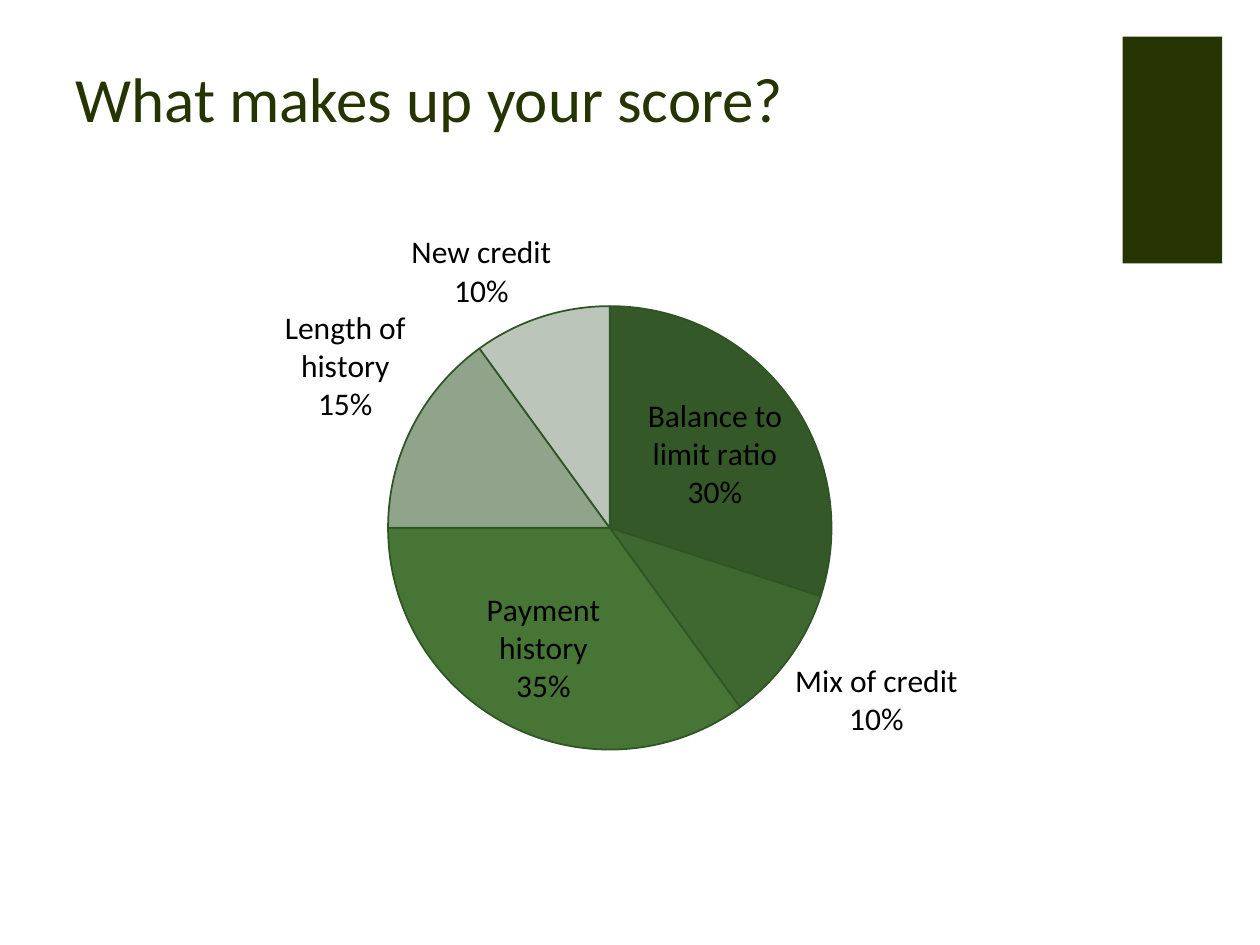
from dataclasses import dataclass

from lxml.etree import SubElement
from pptx import Presentation
from pptx.chart.data import CategoryChartData as ChartData
from pptx.dml.color import RGBColor as Color
from pptx.enum.chart import XL_CHART_TYPE as ChartType, XL_LABEL_POSITION as LabelPosition
from pptx.enum.shapes import MSO_SHAPE as Shape
from pptx.enum.text import MSO_ANCHOR as Anchor, PP_ALIGN as Align
from pptx.oxml.ns import qn
from pptx.util import Inches, Pt


@dataclass(frozen=True)
class Theme:
    font: str = "Calibri"
    dark: str = "263401"
    outline: str = "2F5524"
    label: str = "000000"
    title_size: int = 36
    label_size: int = 18


@dataclass(frozen=True)
class Box:
    left: float
    top: float
    width: float
    height: float

    def lengths(self) -> list:
        return [Inches(v) for v in (self.left, self.top, self.width, self.height)]


@dataclass(frozen=True)
class Factor:
    name: str
    percent: int
    color: str


THEME = Theme()
FACTORS = [
    Factor("Balance to limit ratio", 30, "355828"),
    Factor("Mix of credit", 10, "3F6830"),
    Factor("Payment history", 35, "477536"),
    Factor("Length of history", 15, "90A48C"),
    Factor("New credit", 10, "BBC5B9"),
]
CHART_BOX = Box(1.08, 1.53, 7.25, 5.39)
PIE_BOX = Box(3.08, 2.43, 3.52, 3.52)


def apply_format(target, values: dict) -> None:
    for name, value in values.items():
        setattr(target, name, value)


def format_font(font, size: int, color: str) -> None:
    apply_format(font, {"name": THEME.font, "size": Pt(size), "bold": False})
    font.color.rgb = Color.from_string(color)


def add_accent(slide, box: Box) -> None:
    accent = slide.shapes.add_shape(Shape.RECTANGLE, *box.lengths())
    accent.shadow.inherit = False
    accent.fill.solid()
    accent.fill.fore_color.rgb = Color.from_string(THEME.dark)
    accent.line.fill.background()


def set_title(slide, text: str, box: Box) -> None:
    title = slide.shapes.title
    apply_format(title, dict(zip(("left", "top", "width", "height"), box.lengths())))
    frame = title.text_frame
    apply_format(frame, {"text": text, "word_wrap": True, "vertical_anchor": Anchor.BOTTOM})
    para = frame.paragraphs[0]
    para.alignment = Align.LEFT
    format_font(para.runs[0].font, THEME.title_size, THEME.dark)


def place_plot(chart, outer: Box, inner: Box) -> None:
    """Fix the pie inside its chart, as fractions of the chart's size."""
    plot_area = chart.plots[0]._element.getparent()
    layout = plot_area.find(qn("c:layout"))
    if layout is None:
        layout = SubElement(plot_area, qn("c:layout"))
        plot_area.insert(0, layout)
    manual = SubElement(layout, qn("c:manualLayout"))
    values = {
        "layoutTarget": "inner",
        "xMode": "edge",
        "yMode": "edge",
        "x": (inner.left - outer.left) / outer.width,
        "y": (inner.top - outer.top) / outer.height,
        "w": inner.width / outer.width,
        "h": inner.height / outer.height,
    }
    for name, value in values.items():
        SubElement(manual, qn(f"c:{name}")).set("val", str(value))


def add_pie(slide, factors: list[Factor]) -> None:
    data = ChartData()
    data.categories = [factor.name for factor in factors]
    data.add_series("Series 1", [factor.percent for factor in factors])
    chart = slide.shapes.add_chart(ChartType.PIE, *CHART_BOX.lengths(), data).chart
    apply_format(chart, {"has_title": False, "has_legend": False})
    format_font(chart.font, THEME.label_size, THEME.label)
    place_plot(chart, CHART_BOX, PIE_BOX)

    # Slices
    plot = chart.plots[0]
    plot.vary_by_categories = True
    series = plot.series[0]
    for index, factor in enumerate(factors):
        slice_format = series.points[index].format
        slice_format.fill.solid()
        slice_format.fill.fore_color.rgb = Color.from_string(factor.color)
        slice_format.line.color.rgb = Color.from_string(THEME.outline)
        slice_format.line.width = Pt(1)

    # Labels: name above share
    labels = series.data_labels
    apply_format(labels, {
        "show_category_name": True,
        "show_percentage": True,
        "show_value": False,
        "number_format": "0%",
        "number_format_is_linked": False,
        "position": LabelPosition.BEST_FIT,
    })
    format_font(labels.font, THEME.label_size, THEME.label)
    separator = SubElement(labels._element, qn("c:separator"))
    separator.text = "\n"
    labels._element.find(qn("c:showBubbleSize")).addnext(separator)


def main() -> None:
    deck = Presentation()
    apply_format(deck, {"slide_width": Inches(10), "slide_height": Inches(7.5)})
    page = deck.slides.add_slide(deck.slide_layouts[5])
    add_accent(page, Box(8.91, 0.29, 0.79, 1.8))
    set_title(page, "What makes up your score?", Box(0.5, 0.37, 7.12, 0.75))
    add_pie(page, FACTORS)
    deck.save("out.pptx")


if __name__ == "__main__":
    main()
